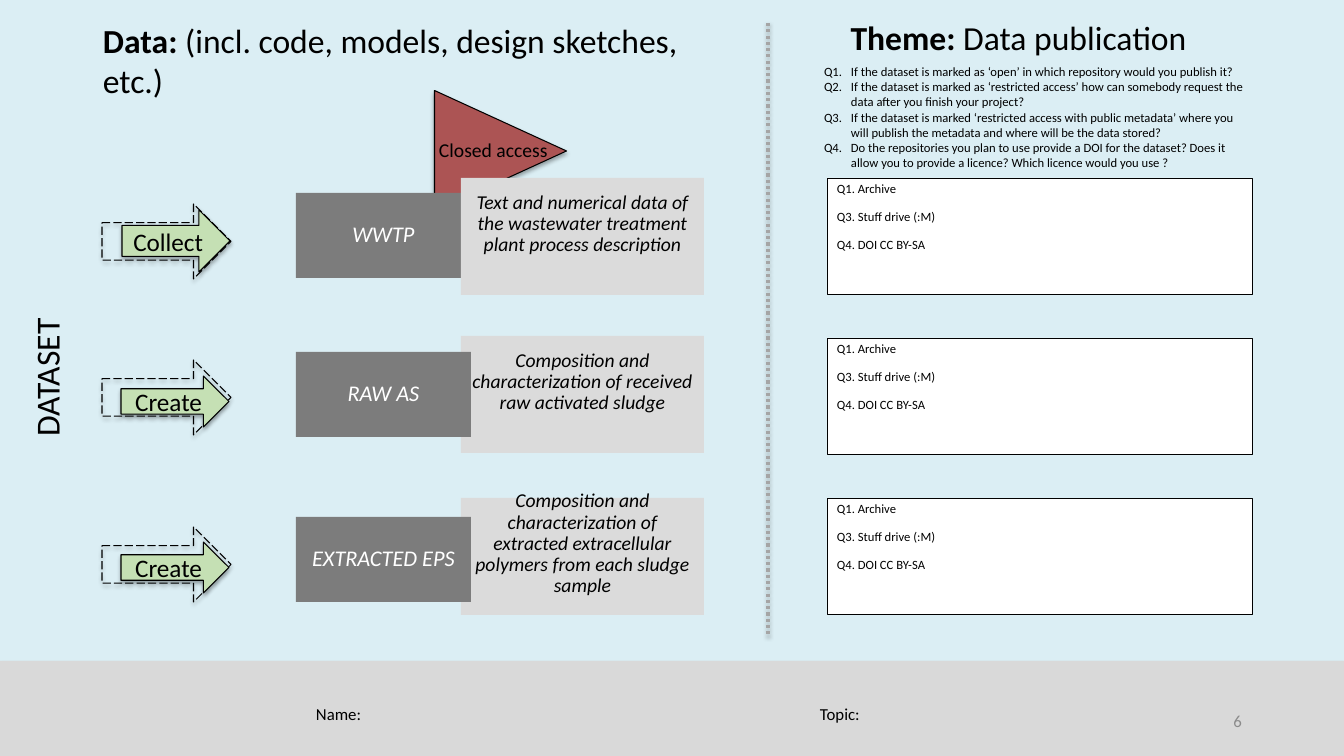
import pptx
import pptx.util
import pptx.dml.color
import pptx.enum.dml
import pptx.enum.shapes
import pptx.enum.text
import pptx.oxml
import pptx.oxml.ns
from lxml import etree

# Content
TITLE = [("Data: ", True), ("(incl. code, models, design sketches, etc.)", False)]
THEME = [("Theme: ", True), ("Data publication", False)]
QUESTIONS = [
    "Q1.\tIf the dataset is marked as ‘open’ in which repository would you publish it?",
    "Q2.\tIf the dataset is marked as ‘restricted access’ how can somebody request the\n"
    "data after you finish your project?",
    "Q3.\tIf the dataset is marked ‘restricted access with public metadata’ where you\n"
    "will publish the metadata and where will be the data stored?",
    "Q4.\tDo the repositories you plan to use provide a DOI for the dataset? Does it\n"
    "allow you to provide a licence? Which licence would you use ?",
]
ANSWERS = ["Q1. Archive", "Q3. Stuff drive (:M)", "Q4. DOI CC BY-SA"]
ROWS = [
    dict(action="Collect", arrow=(122, 210, 108, 62), ghost=204, name="WWTP", name_top=193,
         about="Text and numerical data of the wastewater treatment plant process description",
         top=178, answer_top=178, name_in_front=False),
    dict(action="Create", arrow=(121, 376, 108, 51), ghost=360, name="RAW AS", name_top=352,
         about="Composition and characterization of received raw activated sludge",
         top=336, answer_top=338, name_in_front=True),
    dict(action="Create", arrow=(121, 542, 108, 51), ghost=527, name="EXTRACTED EPS", name_top=517,
         about="Composition and characterization of extracted extracellular polymers "
               "from each sludge sample",
         top=498, answer_top=498, name_in_front=True),
]
FOOTER = [("Name:", 306), ("Topic:", 810)]

COLORS = dict(page="DBEEF4", band="D9D9D9", black="000000", white="FFFFFF", divider="A5A5A5",
              about="DBDBDB", name="7C7C7C", flag="AC5454", action="C5E0B4", number="8B8B8B")
FONT = "Calibri"
PX = 914400 / 100.8
SHAPES = pptx.enum.shapes.MSO_SHAPE
ALIGN = pptx.enum.text.PP_ALIGN
ANCHOR = pptx.enum.text.MSO_ANCHOR
DASH = pptx.enum.dml.MSO_LINE


def px(value):
    return pptx.util.Emu(round(value * PX))


def color(name):
    return pptx.dml.color.RGBColor.from_string(COLORS[name])


def cast_shadow(shape, alpha=35, distance=23000):
    properties = shape._element.spPr
    effects = properties.find(pptx.oxml.ns.qn("a:effectLst"))
    if effects is None:
        effects = etree.SubElement(properties, pptx.oxml.ns.qn("a:effectLst"))
    effects.append(pptx.oxml.parse_xml(
        f'<a:outerShdw {pptx.oxml.ns.nsdecls("a")} blurRad="40000" dist="{distance}" '
        f'dir="5400000" rotWithShape="0"><a:srgbClr val="{COLORS["black"]}">'
        f'<a:alpha val="{alpha * 1000}"/></a:srgbClr></a:outerShdw>'))


def add_shape(kind, place, fill=None, line=None, width=0.75, shadow=False):
    shape = page.shapes.add_shape(kind, *map(px, place))
    shape.shadow.inherit = False
    if fill:
        shape.fill.solid()
        shape.fill.fore_color.rgb = color(fill)
    else:
        shape.fill.background()
    if line:
        shape.line.color.rgb = color(line)
        shape.line.width = pptx.util.Pt(width)
    else:
        shape.line.fill.background()
    if shadow:
        cast_shadow(shape)
    return shape


def write(box, paragraphs, size=12, ink="black", align=ALIGN.LEFT, anchor=ANCHOR.TOP,
          italic=False, spacing=1.0, before=0, hanging=0, bottom=5):
    """Each paragraph is a string or a list of (text, bold) pairs."""
    frame = box.text_frame
    frame.word_wrap = True
    frame.vertical_anchor = anchor
    frame.margin_left = frame.margin_right = px(10)
    frame.margin_top, frame.margin_bottom = px(5), px(bottom)
    for index, content in enumerate(paragraphs):
        para = frame.add_paragraph() if index else frame.paragraphs[0]
        para.alignment = align
        para.line_spacing = spacing
        if index and before:
            para.space_before = pptx.util.Pt(before)
        if hanging:
            para._p.get_or_add_pPr().set("marL", str(px(hanging)))
            para._p.get_or_add_pPr().set("indent", str(-px(hanging)))
        pairs = [(content, False)] if isinstance(content, str) else content
        for text, bold in pairs:
            for number, piece in enumerate(text.split("\n")):
                if number:
                    para.add_line_break()
                span = para.add_run()
                span.text = piece
                span.font.name = FONT
                span.font.size = pptx.util.Pt(size)
                span.font.bold, span.font.italic = bold, italic
                span.font.color.rgb = color(ink)


def add_text(place, paragraphs, **look):
    box = page.shapes.add_textbox(*map(px, place))
    write(box, paragraphs, **look)
    return box


def add_name(row):
    box = add_shape(SHAPES.RECTANGLE, (296, row["name_top"], 175, 85), "name")
    write(box, [row["name"]], size=16, ink="white", italic=True, spacing=0.9,
          align=ALIGN.CENTER, anchor=ANCHOR.MIDDLE)


def add_about(row):
    box = add_shape(SHAPES.RECTANGLE, (461, row["top"], 243, 117), "about")
    write(box, [row["about"]], size=14, italic=True, spacing=0.9, bottom=30,
          align=ALIGN.CENTER, anchor=ANCHOR.MIDDLE)


deck = pptx.Presentation()
deck.slide_width, deck.slide_height = px(1344), px(756)
page = deck.slides.add_slide(deck.slide_layouts[6])
page.background.fill.solid()
page.background.fill.fore_color.rgb = color("page")

# Footer band and divider
add_shape(SHAPES.RECTANGLE, (0, 661, 1344, 95), "band", shadow=True)
divider = page.shapes.add_connector(pptx.enum.shapes.MSO_CONNECTOR.STRAIGHT,
                                    px(768), px(23), px(768), px(636))
divider.line.color.rgb = color("divider")
divider.line.width = pptx.util.Pt(2.25)
divider.line.dash_style = DASH.ROUND_DOT
cast_shadow(divider, alpha=38, distance=20000)

# Headings and questions
add_text((93, 15, 656, 91), [TITLE], size=24)
add_text((693, 12, 651, 50), [THEME], size=24, align=ALIGN.CENTER)
add_text((814, 59, 448, 116), QUESTIONS, size=9, hanging=27)
side_label = add_text((-180, 356, 454, 43), ["DATASET"], size=24, spacing=0.9,
                      align=ALIGN.CENTER)
side_label.rotation = 270

# Access flag
flag = add_shape(SHAPES.ISOSCELES_TRIANGLE, (440, 85, 121, 132), "flag", "black", shadow=True)
flag.rotation = 90
add_text((429, 133, 143, 33), ["Closed access"], size=14)

# One row for each dataset
for row in ROWS:
    ghost = add_shape(SHAPES.RIGHT_ARROW, (102, row["ghost"], 129, 75), line="black", shadow=True)
    ghost.line.dash_style = DASH.LONG_DASH
    action = add_shape(SHAPES.RIGHT_ARROW, row["arrow"], "action", "black", shadow=True)
    write(action, [row["action"]], size=18, align=ALIGN.CENTER, anchor=ANCHOR.MIDDLE)
    layers = [add_about, add_name] if row["name_in_front"] else [add_name, add_about]
    for add_layer in layers:
        add_layer(row)
    answer = add_shape(SHAPES.RECTANGLE, (827, row["answer_top"], 425, 116),
                       "white", "black", width=0.5)
    write(answer, ANSWERS, size=9, spacing=0.9, before=10)

# Footer text
for label, left in FOOTER:
    add_text((left, 701, 454, 43), [label], spacing=0.9)
add_text((950, 701, 302, 40), ["6"], ink="number", align=ALIGN.RIGHT, anchor=ANCHOR.MIDDLE)

deck.save("out.pptx")
